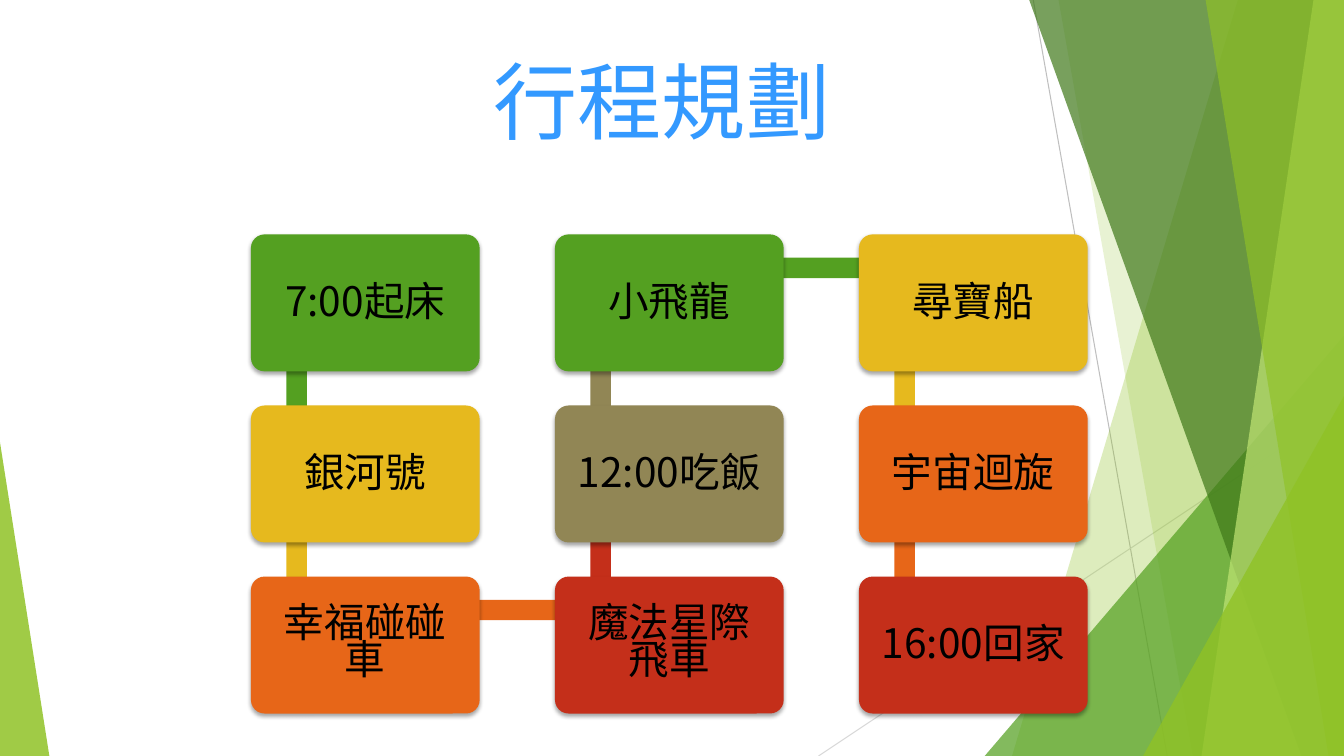
"""Build the day-plan slide: a snaking chain of stops beside green facets."""
from itertools import pairwise

from lxml.etree import SubElement
from pptx import Presentation
from pptx.dml.color import RGBColor
from pptx.enum.shapes import MSO_CONNECTOR as Link, MSO_SHAPE as Preset
from pptx.enum.text import MSO_ANCHOR as Anchor, MSO_AUTO_SIZE as AutoSize, PP_ALIGN as Align
from pptx.oxml.ns import qn
from pptx.util import Inches, Pt

WIDTH, HEIGHT = Inches(13.33), Inches(7.5)
FONT = "Noto Sans CJK JP"
COLORS = {
    "title": "3399FF", "text": "000000", "shadow": "000000",
    "green": "54A021", "gold": "E6B91E", "orange": "E76618",
    "red": "C42F1A", "olive": "918655",
    "lime": "90C226", "forest": "3F7819", "pale": "C0E474",
    "gray": "BFBFBF", "silver": "D9D9D9",
}
STOPS = [
    (0, 0, "7:00起床", "green"),
    (0, 1, "銀河號", "gold"),
    (0, 2, "幸福碰碰車", "orange"),
    (1, 2, "魔法星際飛車", "red"),
    (1, 1, "12:00吃飯", "olive"),
    (1, 0, "小飛龍", "green"),
    (2, 0, "尋寶船", "gold"),
    (2, 1, "宇宙迴旋", "orange"),
    (2, 2, "16:00回家", "red"),
]
GRID_LEFT, GRID_TOP = 18.67, 31.01
COLUMN_STEP, ROW_STEP = 22.62, 22.63
TILE_WIDTH, TILE_HEIGHT = 17.02, 18.12
JOINT_X, JOINT_Y = 3.41, 4.43
BAR_WIDTH, BAR_HEIGHT = 1.53, 2.7


def across(percent):
    """Return a share of the slide's width."""
    return round(WIDTH * percent / 100)


def down(percent):
    """Return a share of the slide's height."""
    return round(HEIGHT * percent / 100)


def place(left, top, width, height):
    """Return a frame given in shares of the slide."""
    return across(left), down(top), across(width), down(height)


def paint(shape, color, opacity=100):
    """Fill a shape without outline or shadow."""
    shape.shadow.inherit = False
    shape.line.fill.background()
    shape.fill.solid()
    shape.fill.fore_color.rgb = RGBColor.from_string(COLORS[color])
    if opacity < 100:
        tint = shape.fill._xPr.find(qn("a:solidFill"))[0]
        SubElement(tint, qn("a:alpha"), val=str(opacity * 1000))


def style_text(para, size, color, spacing, align):
    """Format a paragraph and its runs."""
    para.alignment = align
    para.line_spacing = spacing
    for span in para.runs:
        span.font.size = Pt(size)
        span.font.name = FONT
        span.font.color.rgb = RGBColor.from_string(COLORS[color])
        SubElement(span.font._element, qn("a:ea"), typeface=FONT)


def add_ray(page, start, end, color):
    """Draw a thin line between two points."""
    ray = page.shapes.add_connector(
        Link.STRAIGHT, across(start[0]), down(start[1]), across(end[0]), down(end[1]))
    ray.line.width = Pt(0.75)
    ray.line.color.rgb = RGBColor.from_string(COLORS[color])
    SubElement(ray._element.spPr, qn("a:effectLst"))


def add_facet(page, top_left, bottom_left, color, opacity):
    """Draw a full-height facet that reaches the right edge."""
    outline = page.shapes.build_freeform(across(top_left), 0)
    outline.add_line_segments([(WIDTH, 0), (WIDTH, HEIGHT), (across(bottom_left), HEIGHT)])
    paint(outline.convert_to_shape(), color, opacity)


def add_corner(page, left, top, width, apex, color, opacity):
    """Draw a right triangle that stands on the bottom edge."""
    corner = page.shapes.add_shape(
        Preset.ISOSCELES_TRIANGLE, *place(left, top, width, 100 - top))
    corner.adjustments[0] = apex
    paint(corner, color, opacity)


def add_backdrop(page):
    """Draw the lines and facets behind the plan."""
    add_ray(page, (76.88, 0), (86.85, 100), "gray")
    add_ray(page, (100, 53.73), (60.9, 100), "silver")
    add_facet(page, 92.1, 75.3, "lime", 30)
    add_facet(page, 78.76, 88.74, "lime", 20)
    add_corner(page, 73.27, 44.4, 26.73, 1, "green", 72)
    add_facet(page, 76.58, 96.83, "forest", 70)
    add_facet(page, 97.73, 89.4, "pale", 70)
    add_facet(page, 89.7, 98.85, "lime", 65)
    add_corner(page, 85.05, 52.4, 14.95, 1, "lime", 80)
    add_corner(page, 0, 58.53, 3.67, 0, "lime", 85)


def add_title(page, text):
    """Move and format the title placeholder."""
    title = page.shapes.title
    title.left, title.top, title.width, title.height = place(36, 7.45, 27.6, 19.3)
    frame = title.text_frame
    frame.text = text
    frame.auto_size = AutoSize.NONE
    frame.vertical_anchor = Anchor.TOP
    style_text(frame.paragraphs[0], 60, "title", 0.9, Align.LEFT)


def corner_of(column, row):
    """Return the top left corner of a grid cell."""
    return GRID_LEFT + column * COLUMN_STEP, GRID_TOP + row * ROW_STEP


def add_bar(page, stop, following):
    """Join two neighbouring stops with a bar."""
    first, second = corner_of(*stop[:2]), corner_of(*following[:2])
    left = min(first[0], second[0]) + JOINT_X
    top = min(first[1], second[1]) + JOINT_Y
    width, height = abs(first[0] - second[0]), abs(first[1] - second[1])
    if stop[0] == following[0]:
        frame = place(left - BAR_WIDTH / 2, top, BAR_WIDTH, height)
    else:
        frame = place(left, top - BAR_HEIGHT / 2, width, BAR_HEIGHT)
    paint(page.shapes.add_shape(Preset.RECTANGLE, *frame), stop[3])


def add_tile(page, column, row, label, color):
    """Draw one stop as a rounded tile with its label."""
    tile = page.shapes.add_shape(
        Preset.ROUNDED_RECTANGLE,
        *place(*corner_of(column, row), TILE_WIDTH, TILE_HEIGHT))
    tile.adjustments[0] = 0.1
    paint(tile, color)
    effects = tile._element.spPr.find(qn("a:effectLst"))
    shadow = SubElement(effects, qn("a:outerShdw"), blurRad=str(Pt(3)),
                        dist=str(Pt(2)), dir="5400000", rotWithShape="0")
    tint = SubElement(shadow, qn("a:srgbClr"), val=COLORS["shadow"])
    SubElement(tint, qn("a:alpha"), val="35000")
    frame = tile.text_frame
    frame.text = label
    frame.word_wrap = True
    frame.vertical_anchor = Anchor.MIDDLE
    frame.margin_left = frame.margin_right = Inches(0.16)
    frame.margin_top = frame.margin_bottom = Inches(0.16)
    wraps = label.isalpha() and len(label) > 4
    style_text(frame.paragraphs[0], 29, "text", 0.75 if wraps else 0.9, Align.CENTER)


def main():
    """Build and save the deck."""
    deck = Presentation()
    deck.slide_width, deck.slide_height = WIDTH, HEIGHT
    page = deck.slides.add_slide(deck.slide_layouts[5])
    add_backdrop(page)
    add_title(page, "行程規劃")
    for stop, following in pairwise(STOPS):
        add_bar(page, stop, following)
    for stop in STOPS:
        add_tile(page, *stop)
    deck.save("out.pptx")


if __name__ == "__main__":
    main()
